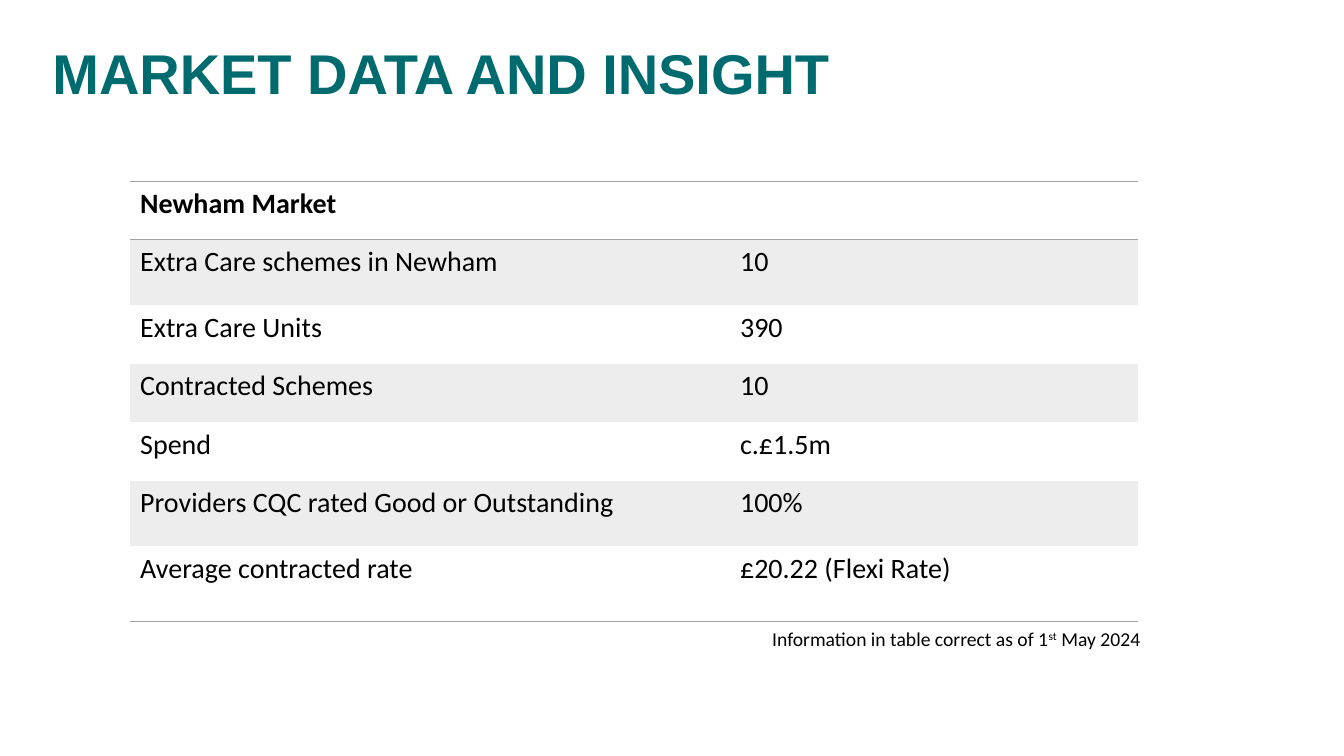
import pptx
import pptx.util
import pptx.dml.color
import pptx.enum.text
import pptx.oxml.ns
import lxml.etree

Inches = pptx.util.Inches
PLAIN = "{2D5ABB26-0587-4C30-8999-92F81FD0307C}"
GREY = "A5A5A5"
ROWS = [
    ("Newham Market", "", 0.58),
    ("Extra Care schemes in Newham", "10", 0.65),
    ("Extra Care Units", "390", 0.58),
    ("Contracted Schemes", "10", 0.58),
    ("Spend", "c.£1.5m", 0.58),
    ("Providers CQC rated Good or Outstanding", "100%", 0.65),
    ("Average contracted rate", "£20.22 (Flexi Rate)", 0.75),
]


def color(text):
    """Return the colour for a hex string."""
    return pptx.dml.color.RGBColor.from_string(text)


def style(para, size, face="Calibri", ink="000000", bold=False):
    """Set the font of a paragraph."""
    font = para.font
    font.name, font.size, font.bold = face, pptx.util.Pt(size), bold
    font.color.rgb = color(ink)


def border(cell, side):
    """Draw a thin grey line on one side of a cell."""
    qn = pptx.oxml.ns.qn
    line = lxml.etree.SubElement(cell._tc.get_or_add_tcPr(), qn("a:" + side), w="12700")
    fill = lxml.etree.SubElement(line, qn("a:solidFill"))
    lxml.etree.SubElement(fill, qn("a:srgbClr"), val=GREY)


def add_title(slide, text):
    """Fill and place the title."""
    title = slide.shapes.title
    title.left, title.top = Inches(0.42), Inches(0.3)
    title.width, title.height = Inches(10), Inches(0.81)
    frame = title.text_frame
    frame.text = text
    frame.word_wrap = True
    frame.auto_size = pptx.enum.text.MSO_AUTO_SIZE.NONE
    frame.vertical_anchor = pptx.enum.text.MSO_ANCHOR.BOTTOM
    para = frame.paragraphs[0]
    para.alignment = pptx.enum.text.PP_ALIGN.LEFT
    para.line_spacing = 0.9
    style(para, 40, "Arial", "006B6F", True)


def add_grid(slide):
    """Add the market table with shaded odd rows."""
    total = sum(row[2] for row in ROWS)
    frame = slide.shapes.add_table(
        len(ROWS), 2, Inches(1.29), Inches(1.8), Inches(10), Inches(total))
    table = frame.table
    table._tbl.tblPr.find(pptx.oxml.ns.qn("a:tableStyleId")).text = PLAIN
    table.horz_banding = False
    for column, width in zip(table.columns, (5.95, 4.05)):
        column.width = Inches(width)
    for index, (label, value, height) in enumerate(ROWS):
        table.rows[index].height = Inches(height)
        for cell, text in zip(table.rows[index].cells, (label, value)):
            cell.text = text
            style(cell.text_frame.paragraphs[0], 20, bold=index == 0)
            if index == 0:
                border(cell, "lnT")
            if index in (0, len(ROWS) - 1):
                border(cell, "lnB")
            if index % 2:
                cell.fill.solid()
                cell.fill.fore_color.rgb = color("EDEDED")
            else:
                cell.fill.background()
    table.cell(0, 0).merge(table.cell(0, 1))


def add_note(slide):
    """Add the dated note under the table."""
    box = slide.shapes.add_textbox(
        Inches(7.56), Inches(6.17), Inches(4.26), Inches(0.34))
    box.text_frame.word_wrap = True
    para = box.text_frame.paragraphs[0]
    style(para, 14)
    for text in ("Information in table correct as of 1", "st", " May 2024"):
        run = para.add_run()
        run.text = text
        if text == "st":
            run._r.get_or_add_rPr().set("baseline", "30000")


def main():
    """Build and save the slide."""
    deck = pptx.Presentation()
    deck.slide_width, deck.slide_height = Inches(13.33), Inches(7.5)
    slide = deck.slides.add_slide(deck.slide_layouts[5])
    add_title(slide, "MARKET DATA AND INSIGHT")
    add_grid(slide)
    add_note(slide)
    deck.save("out.pptx")


if __name__ == "__main__":
    main()
